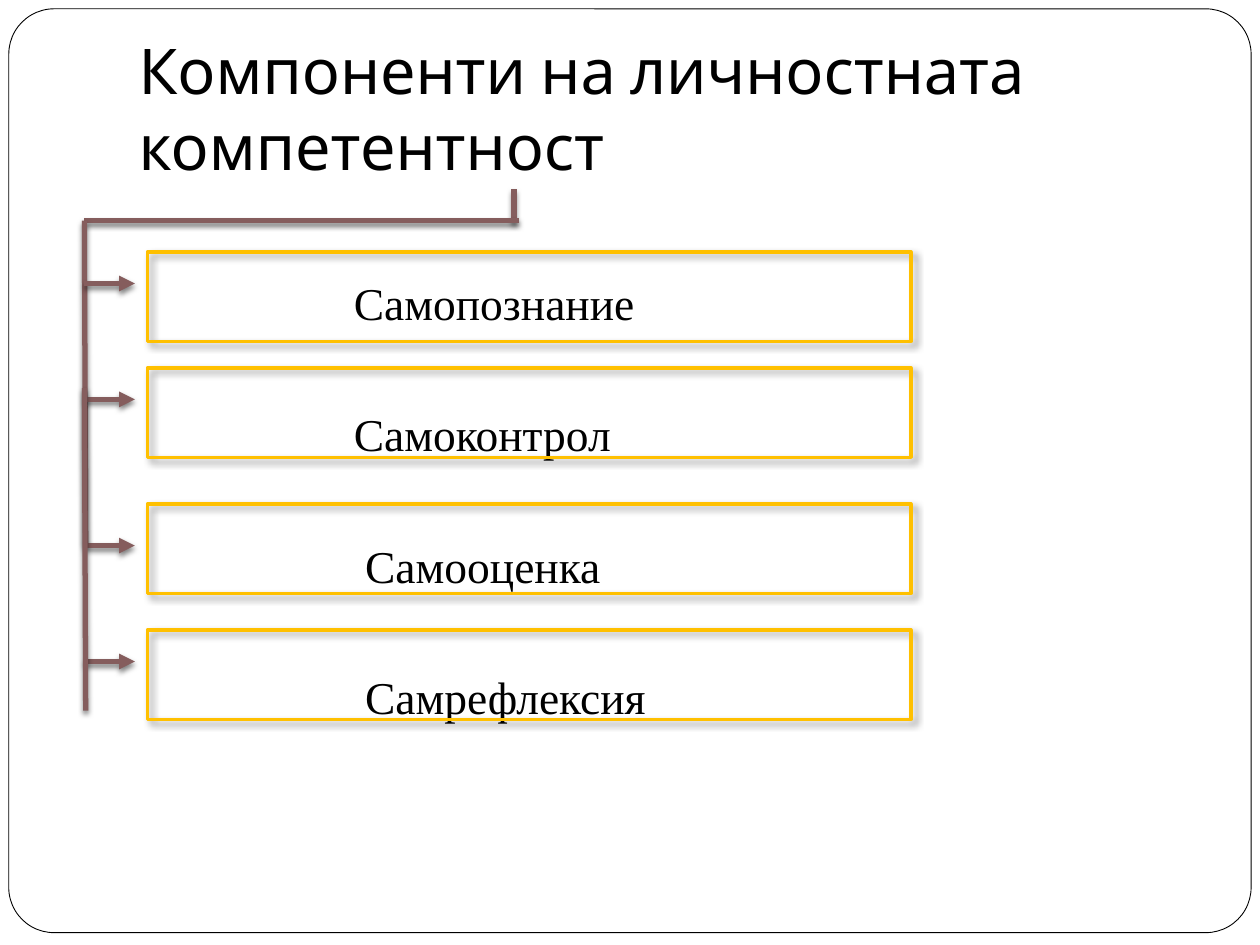
import pptx
import pptx.util
import pptx.dml.color
import pptx.enum.shapes
import pptx.enum.text
import pptx.oxml
import pptx.oxml.ns

Inches, Pt = pptx.util.Inches, pptx.util.Pt
SHAPES = pptx.enum.shapes.MSO_SHAPE
W, H = 10, 7.5
BLACK, WHITE, BROWN, AMBER = "000000", "FFFFFF", "855D5D", "FFC000"
LABELS = ["Самопознание", "Самоконтрол", "Самооценка", "Самрефлексия"]
LABEL_INDENTS = [1.71, 1.71, 1.8, 1.8]
BOX_TOPS = [2, 2.92, 4, 5]
ARROW_YS = [2.25, 3.17, 4.33, 5.25]


def rgb(value):
    return pptx.dml.color.RGBColor.from_string(value)


def add_xml(parent, body):
    ns = pptx.oxml.ns.nsdecls("a")
    parent.append(pptx.oxml.parse_xml(body.replace(" ", f" {ns} ", 1)))


def add_shadow(shape, alpha, blur, dist, angle):
    add_xml(shape._element.spPr,
            f'<a:effectLst ><a:outerShdw blurRad="{Pt(blur)}" dist="{Pt(dist)}" '
            f'dir="{angle * 60000}" algn="t" rotWithShape="0"><a:srgbClr val="{BLACK}">'
            f'<a:alpha val="{alpha * 1000}"/></a:srgbClr></a:outerShdw></a:effectLst>')


def add_run(p, text, font, size):
    r = p.add_run()
    r.text = text
    r.font.name, r.font.size = font, Pt(size)
    r.font.color.rgb = rgb(BLACK)


def outline(shape, colour, width):
    shape.line.color.rgb = rgb(colour)
    shape.line.width = Pt(width)


def add_line(s, x1, y1, x2, y2, arrow=False):
    line = s.shapes.add_connector(pptx.enum.shapes.MSO_CONNECTOR.STRAIGHT,
                                  *map(Inches, (x1, y1, x2, y2)))
    outline(line, BROWN, 3)
    if arrow:
        add_xml(line.line._get_or_add_ln(), '<a:tailEnd type="triangle"/>')
    add_shadow(line, 50, 3, 2, 90)


def add_frame(s, margin):
    frame = s.shapes.add_shape(SHAPES.ROUNDED_RECTANGLE, *map(
        Inches, (margin, margin, W - 2 * margin, H - 2.4 * margin)))
    frame.adjustments[0] = 0.049
    frame.shadow.inherit = False
    frame.fill.solid()
    frame.fill.fore_color.rgb = rgb(WHITE)
    outline(frame, BLACK, 0.5)
    # The frame lies behind the title
    s.shapes._spTree.insert(2, frame._element)


def place_title(s, x, y, w, h):
    title = s.shapes.title
    title.left, title.top, title.width, title.height = map(Inches, (x, y, w, h))
    tf = title.text_frame
    tf.word_wrap = True
    tf.auto_size = pptx.enum.text.MSO_AUTO_SIZE.NONE
    tf.vertical_anchor = pptx.enum.text.MSO_ANCHOR.BOTTOM
    tf.margin_bottom = Inches(0.1)
    p = tf.paragraphs[0]
    p.alignment = pptx.enum.text.PP_ALIGN.LEFT
    add_run(p, "Компоненти на личностната компетентност", "Cabin", 36)


def add_labels(s, x, y, w, h):
    tf = s.shapes.add_textbox(*map(Inches, (x, y, w, h))).text_frame
    tf.word_wrap = True
    tf.margin_top = Inches(0.6)
    for i, (text, indent) in enumerate(zip(LABELS, LABEL_INDENTS)):
        p = tf.add_paragraph() if i else tf.paragraphs[0]
        p.space_after = Pt(44)
        p._p.get_or_add_pPr().set("marL", str(Inches(indent)))
        add_run(p, text, "Times New Roman", 26)


def add_tree(s, x, y, w, h):
    # Stem from the title, crossbar and upper trunk
    bar = y + 0.25
    add_line(s, x + w - 0.04, y, x + w - 0.04, bar + 0.01)
    add_line(s, x, bar, x + w, bar)
    add_line(s, x, bar, x + 0.01, 4.31)
    for arrow_y in ARROW_YS:
        add_line(s, x, arrow_y, x + 0.4, arrow_y, arrow=True)
    # Lower trunk
    add_line(s, x, 3.08, x + 0.01, y + h)


def add_boxes(s, x, w, h):
    for top in BOX_TOPS:
        box = s.shapes.add_shape(SHAPES.RECTANGLE, *map(Inches, (x, top, w, h)))
        box.fill.background()
        outline(box, AMBER, 2)
        add_shadow(box, 40, 4, 3, 45)


def main():
    prs = pptx.Presentation()
    prs.slide_width, prs.slide_height = Inches(W), Inches(H)
    s = prs.slides.add_slide(prs.slide_layouts[5])
    add_frame(s, 0.07)
    place_title(s, 0.1 * W, 0.04 * H, 0.85 * W, H / 6)
    add_labels(s, 0.1 * W, 1.58, 0.85 * W, 5)
    add_tree(s, 0.67, 0.2 * H, 3.45, 4.14)
    add_boxes(s, 1.17, 6.06, 0.71)
    prs.save("out.pptx")


if __name__ == "__main__":
    main()
